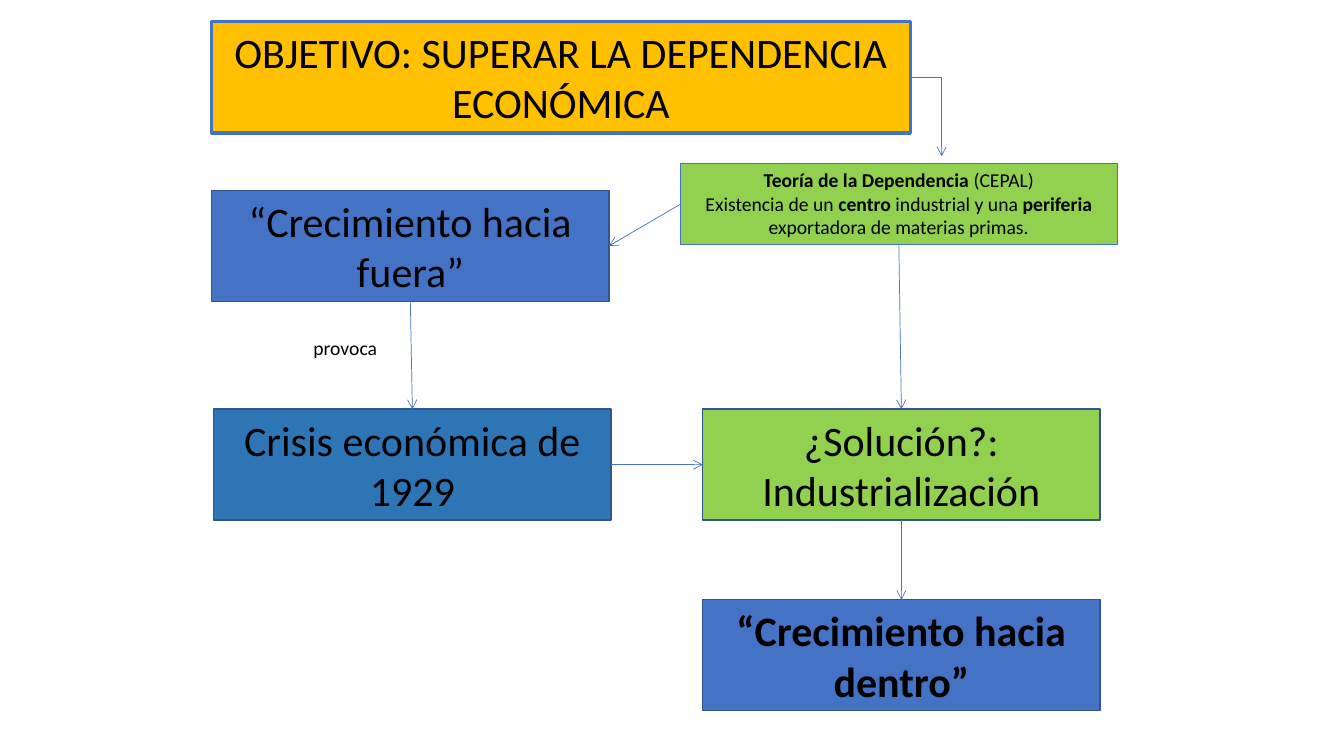
from dataclasses import dataclass

from lxml import etree
from pptx import Presentation
from pptx import util as u
from pptx.dml import color
from pptx.enum import shapes, text
from pptx.oxml import ns


@dataclass(frozen=True)
class Theme:
    font: str = "Calibri"
    ink: str = "000000"
    gold: str = "FFC000"
    green: str = "92D050"
    blue: str = "4472C4"
    teal: str = "2E75B6"
    edge: str = "325491"
    big: int = 30
    small: int = 14


T = Theme()
WIDE, HIGH = 3.94, 1.1
TOP, LEFT, BOTTOM, RIGHT = range(4)


def rgb(code):
    return color.RGBColor.from_string(code)


def apply(target, form):
    for name, value in form.items():
        setattr(target, name, value)


def write(shape, lines, size, align, anchor):
    """Fill a shape with lines; parts between ** marks are bold."""
    frame = shape.text_frame
    apply(frame, {"word_wrap": True, "vertical_anchor": anchor})
    for i, line in enumerate(lines):
        para = frame.paragraphs[0] if i == 0 else frame.add_paragraph()
        para.alignment = align
        for j, part in enumerate(line.split("**")):
            if part:
                run = para.add_run()
                run.text = part
                apply(run.font, {"name": T.font, "size": u.Pt(size),
                                 "bold": j % 2 == 1})
                run.font.color.rgb = rgb(T.ink)


def box(slide, area, fill, lines, size=T.big, edge=T.edge, width=1,
        anchor=text.MSO_ANCHOR.MIDDLE):
    shape = slide.shapes.add_shape(
        shapes.MSO_SHAPE.RECTANGLE, *map(u.Inches, area))
    shape.shadow.inherit = False
    shape.fill.solid()
    shape.fill.fore_color.rgb = rgb(fill)
    shape.line.color.rgb = rgb(edge)
    shape.line.width = u.Pt(width)
    write(shape, lines, size, text.PP_ALIGN.CENTER, anchor)
    return shape


def label(slide, area, words):
    shape = slide.shapes.add_textbox(*map(u.Inches, area))
    write(shape, [words], T.small, text.PP_ALIGN.LEFT, text.MSO_ANCHOR.TOP)


def arrow(slide, kind, ends=(0, 0, 0, 0)):
    line = slide.shapes.add_connector(kind, *map(u.Inches, ends))
    line.line.color.rgb = rgb(T.blue)
    line.line.width = u.Pt(0.5)
    tail = etree.SubElement(line.line._get_or_add_ln(), ns.qn("a:tailEnd"))
    tail.set("type", "arrow")
    etree.SubElement(line._element.spPr, ns.qn("a:effectLst"))
    return line


def link(slide, start, side, end, site):
    """Join two boxes by a straight arrow."""
    line = arrow(slide, shapes.MSO_CONNECTOR.STRAIGHT)
    line.begin_connect(start, side)
    line.end_connect(end, site)


def bend(slide, ends):
    """Draw an arrow with a single corner."""
    line = arrow(slide, shapes.MSO_CONNECTOR.ELBOW, ends)
    line._element.spPr.find(ns.qn("a:prstGeom")).set("prst", "bentConnector2")


def main():
    deck = Presentation()
    apply(deck, {"slide_width": u.Inches(13.33),
                 "slide_height": u.Inches(7.5)})
    slide = deck.slides.add_slide(deck.slide_layouts[6])
    top = text.MSO_ANCHOR.TOP

    # Goal and theory
    box(slide, (2.1, 0.21, 6.93, 1.11), T.gold,
        ["OBJETIVO: SUPERAR LA DEPENDENCIA ECONÓMICA"],
        edge=T.blue, width=2.25, anchor=top)
    theory = box(slide, (6.75, 1.62, 4.33, 0.81), T.green, [
        "**Teoría de la Dependencia **(CEPAL)",
        "Existencia de un **centro **industrial y una **periferia **"
        "exportadora de materias primas."],
        size=T.small, edge=T.blue, width=0.75, anchor=top)

    # Stages
    outward = box(slide, (2.1, 1.89, WIDE, HIGH), T.blue,
                  ["“Crecimiento hacia fuera”"])
    crisis = box(slide, (2.12, 4.06, WIDE, HIGH), T.teal,
                 ["Crisis económica de 1929"])
    answer = box(slide, (6.97, 4.06, WIDE, HIGH), T.green,
                 ["¿Solución?:", "Industrialización"])
    inward = box(slide, (6.97, 5.95, WIDE, HIGH), T.blue,
                 ["**“Crecimiento hacia dentro”**"])

    # Arrows
    bend(slide, (9.03, 0.77, 9.34, 1.55))
    for ends in (
        (theory, LEFT, outward, RIGHT),
        (theory, BOTTOM, answer, TOP),
        (outward, BOTTOM, crisis, TOP),
        (crisis, RIGHT, answer, LEFT),
        (answer, BOTTOM, inward, TOP),
    ):
        link(slide, *ends)
    label(slide, (3.01, 3.28, 1.42, 0.34), "provoca")

    deck.save("out.pptx")


if __name__ == "__main__":
    main()
